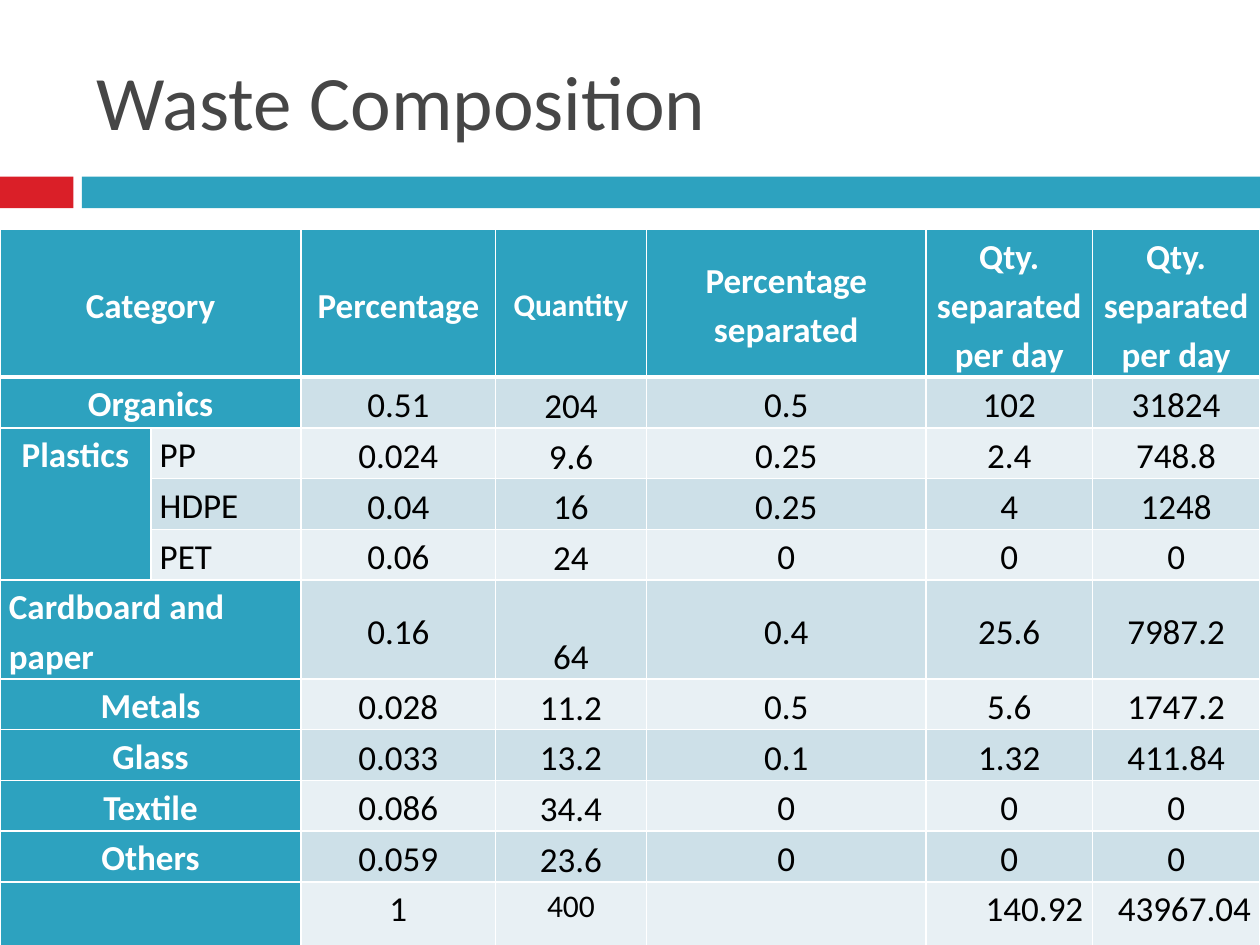
import pptx
import pptx.util
import pptx.dml.color
import pptx.enum.shapes
import pptx.enum.text
import pptx.oxml
import pptx.oxml.ns

Cm = pptx.util.Cm
Pt = pptx.util.Pt
RGBColor = pptx.dml.color.RGBColor
ALIGN = pptx.enum.text.PP_ALIGN
ANCHOR = pptx.enum.text.MSO_ANCHOR

TEAL = RGBColor(0x2D, 0xA2, 0xBF)
RED = RGBColor(0xDA, 0x1F, 0x28)
GREY = RGBColor(0x46, 0x46, 0x46)
WHITE = RGBColor(0xFF, 0xFF, 0xFF)
BLACK = RGBColor(0, 0, 0)
DARK = RGBColor(0xCD, 0xE0, 0xE8)
LIGHT = RGBColor(0xE8, 0xF0, 0xF4)

COLS = [3.04, 3.03, 3.92, 3.04, 5.64, 3.35, 3.38]
ROWS = [2.84] + [0.97] * 4 + [1.9] + [0.97] * 4 + [1.83]
DATA = [
    ["Category", "", "Percentage", "Quantity", "Percentage separated",
     "Qty. separated per day", "Qty. separated per day"],
    ["Organics", "", "0.51", "204", "0.5", "102", "31824"],
    ["Plastics", "PP", "0.024", "9.6", "0.25", "2.4", "748.8"],
    ["", "HDPE", "0.04", "16", "0.25", "4", "1248"],
    ["", "PET", "0.06", "24", "0", "0", "0"],
    ["Cardboard and paper", "", "0.16", "64", "0.4", "25.6", "7987.2"],
    ["Metals", "", "0.028", "11.2", "0.5", "5.6", "1747.2"],
    ["Glass", "", "0.033", "13.2", "0.1", "1.32", "411.84"],
    ["Textile", "", "0.086", "34.4", "0", "0", "0"],
    ["Others", "", "0.059", "23.6", "0", "0", "0"],
    ["", "", "1", "400", "", "140.92", "43967.04"],
]
LAST = len(DATA) - 1
PLASTIC = range(2, 5)
PAPER = 5
QTY = 3


def apply(item, form):
    for key, value in form.items():
        setattr(item, key, value)


def add_band(slide, left, width, color):
    band = slide.shapes.add_shape(
        pptx.enum.shapes.MSO_SHAPE.RECTANGLE,
        Cm(left), Cm(3.56), Cm(width), Cm(0.64))
    band.shadow.inherit = False
    band.fill.solid()
    band.fill.fore_color.rgb = color
    band.line.fill.background()


def set_title(slide, text):
    title = slide.shapes.title
    apply(title, {"left": Cm(1.7), "top": Cm(0.64),
                  "width": Cm(22.66), "height": Cm(2.74)})
    frame = title.text_frame
    apply(frame, {"text": text, "vertical_anchor": ANCHOR.MIDDLE})
    para = frame.paragraphs[0]
    para.alignment = ALIGN.LEFT
    apply(para.font, {"size": Pt(44), "name": "Calibri"})
    para.font.color.rgb = GREY


def set_edge(cell, side, width):
    line = pptx.oxml.parse_xml(
        f'<a:ln{side} {pptx.oxml.ns.nsdecls("a")} w="{Pt(width)}">'
        f'<a:solidFill><a:srgbClr val="{WHITE}"/></a:solidFill></a:ln{side}>')
    cell._tc.get_or_add_tcPr().append(line)


def cell_form(row, col):
    """Alignment, anchor and size that follow from a cell's place."""
    align, anchor, size = ALIGN.CENTER, ANCHOR.MIDDLE, 20
    if row and (col < 2 or row == LAST):
        anchor = ANCHOR.TOP
    elif row and col == QTY:
        anchor = ANCHOR.BOTTOM
    if (row in PLASTIC and col == 1) or (row == PAPER and col == 0):
        align = ALIGN.LEFT
    elif row == LAST and col > 4:
        align = ALIGN.RIGHT
    if col == QTY and row in (0, LAST):
        size = 18
    return align, anchor, size


def fill_cell(cell, row, col, text):
    head = row == 0 or col == 0
    align, anchor, size = cell_form(row, col)
    tight = col == QTY and 0 < row < LAST
    side = Cm(0.03 if tight else 0.18)
    apply(cell, {"text": text, "vertical_anchor": anchor,
                 "margin_left": side, "margin_right": side,
                 "margin_top": Cm(0.03 if tight else 0), "margin_bottom": 0})
    # Borders come before the fill in the cell's XML
    for edge in "LRTB":
        thick = (row, edge) in ((0, "B"), (1, "T"))
        set_edge(cell, edge, 3 if thick else 1)
    cell.fill.solid()
    cell.fill.fore_color.rgb = TEAL if head else DARK if row % 2 else LIGHT
    para = cell.text_frame.paragraphs[0]
    apply(para, {"alignment": align, "line_spacing": 1.15})
    apply(para.font, {"size": Pt(size), "name": "Calibri", "bold": head})
    para.font.color.rgb = WHITE if head else BLACK


def add_grid(slide):
    table = slide.shapes.add_table(
        len(ROWS), len(COLS), 0, Cm(4.62), Cm(25.4), Cm(14.7)).table
    for col, width in zip(table.columns, COLS):
        col.width = Cm(width)
    for row, height in zip(table.rows, ROWS):
        row.height = Cm(height)
    for r, line in enumerate(DATA):
        for c, text in enumerate(line):
            fill_cell(table.cell(r, c), r, c, text)
    # Only the plastics are split into kinds
    for r in range(len(ROWS)):
        if r not in PLASTIC:
            table.cell(r, 0).merge(table.cell(r, 1))
    table.cell(PLASTIC[0], 0).merge(table.cell(PLASTIC[-1], 0))


def main():
    deck = pptx.Presentation()
    apply(deck, {"slide_width": Cm(25.4), "slide_height": Cm(19.05)})
    slide = deck.slides.add_slide(deck.slide_layouts[5])
    # Title and the bands below it
    set_title(slide, "Waste Composition")
    add_band(slide, 0, 1.48, RED)
    add_band(slide, 1.65, 23.75, TEAL)
    # Waste table
    add_grid(slide)
    deck.save("out.pptx")


if __name__ == "__main__":
    main()
